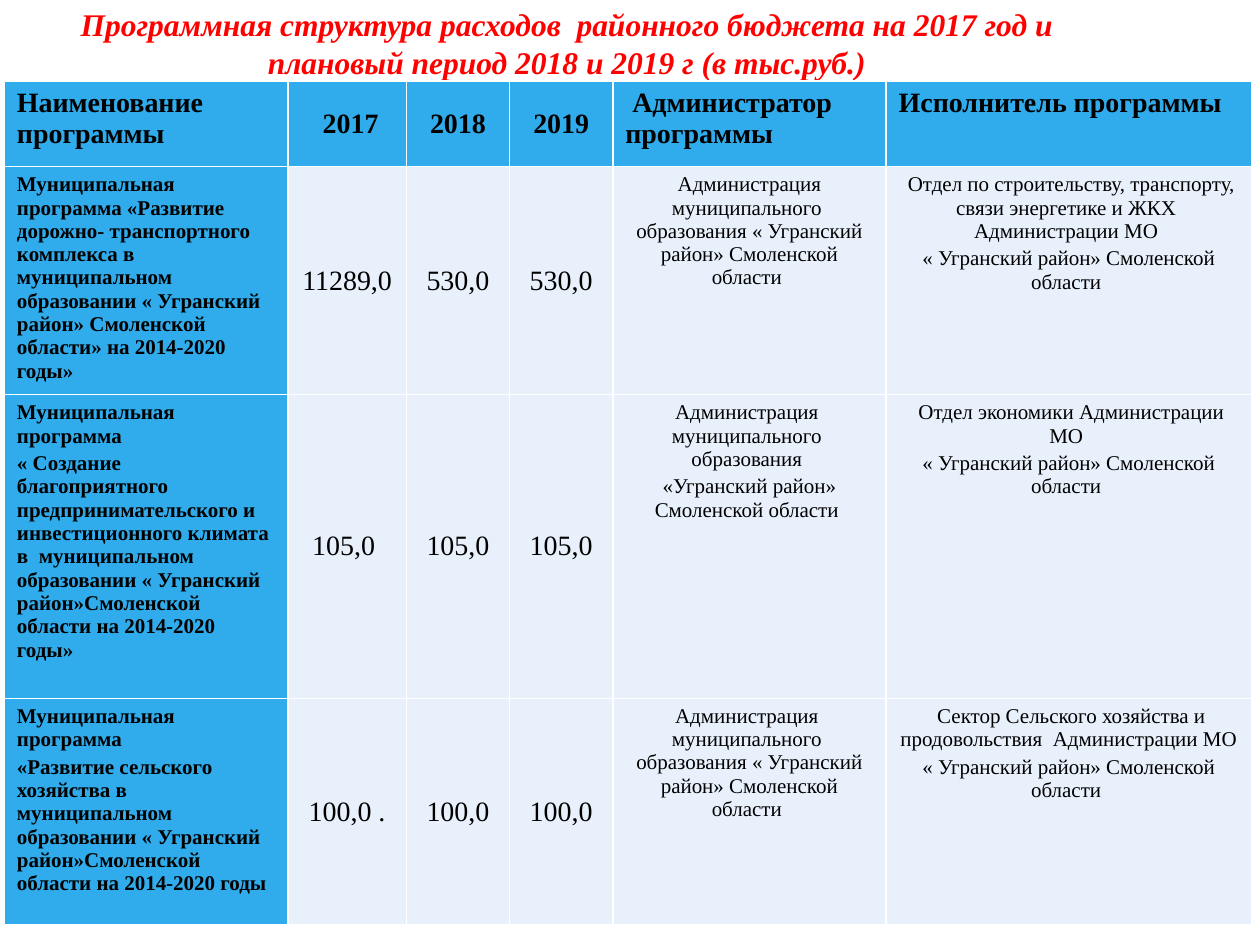
"""Build a slide with the programme structure of a district budget."""
from dataclasses import dataclass

from pptx import Presentation
from pptx.dml.color import RGBColor
from pptx.enum import text as t
from pptx.util import Pt

FACE = "Times New Roman"
BLUE, PALE, BLACK, RED = "30ACEC", "E8F1FB", "000000", "FF0000"
LEFT, MID = t.PP_ALIGN.LEFT, t.PP_ALIGN.CENTER
TOP, CORE = t.MSO_ANCHOR.TOP, t.MSO_ANCHOR.MIDDLE
WIDTHS = (162, 67.7, 59, 59, 156.2, 208.8)
HEIGHTS = (49, 130.3, 173.5, 129.6)
YEARS = range(1, 4)
TITLE = ("Программная структура расходов  районного бюджета на 2017 год и "
         "плановый период 2018 и 2019 г (в тыс.руб.)")
HEADS = ("Наименование программы", " 2017", "2018", "2019",
         " Администратор программы", "Исполнитель программы")
ADMIN = ("Администрация  муниципального  образования « Угранский район» "
         "Смоленской области ")
AREA = "« Угранский район» Смоленской области "


@dataclass(frozen=True)
class Plan:
    """One programme with its yearly sums and the bodies in charge."""
    name: str
    sums: tuple[str, str, str]
    admin: str
    doer: str

    def texts(self) -> tuple[str, ...]:
        """Return the cell texts from left to right."""
        return self.name, *self.sums, self.admin, self.doer


@dataclass(frozen=True)
class Style:
    """Look of the text and ground of a cell."""
    size: int
    bold: bool
    align: t.PP_ALIGN
    anchor: t.MSO_ANCHOR
    fill: str


PLANS = (
    Plan("Муниципальная программа «Развитие дорожно- транспортного комплекса "
         "в муниципальном образовании « Угранский район» Смоленской области» "
         "на 2014-2020 годы»",
         ("11289,0", "530,0", "530,0"), " " + ADMIN,
         " Отдел по строительству, транспорту, связи энергетике и ЖКХ  "
         "Администрации МО \n" + AREA),
    Plan("Муниципальная программа\n« Создание благоприятного "
         "предпринимательского и инвестиционного климата в  муниципальном "
         "образовании « Угранский район»Смоленской области на 2014-2020 годы»",
         ("105,0 ", "105,0", "105,0"),
         "Администрация  муниципального  образования \n"
         "«Угранский район» Смоленской области ",
         " Отдел экономики Администрации МО \n" + AREA),
    Plan("Муниципальная программа\n«Развитие сельского хозяйства в "
         "муниципальном образовании « Угранский район»Смоленской области "
         "на 2014-2020 годы",
         ("100,0 .", "100,0", "100,0"), ADMIN,
         " Сектор Сельского хозяйства и продовольствия  Администрации МО \n"
         + AREA),
)


def paint(fmt, tone: str) -> None:
    """Give a font or a solid fill its colour."""
    if hasattr(fmt, "solid"):
        fmt.solid()
        fmt = fmt.fore_color
    else:
        fmt = fmt.color
    fmt.rgb = RGBColor.from_string(tone)


def write(frame, words: str, size: int, bold: bool, tone: str,
          align: t.PP_ALIGN, slant: bool = False) -> None:
    """Fill a text frame with evenly styled paragraphs."""
    frame.text = words
    for num, para in enumerate(frame.paragraphs):
        para.alignment = align
        para.space_before = Pt(0.2 * size if num else 0)
        font = para.font
        font.name, font.size = FACE, Pt(size)
        font.bold, font.italic = bold, slant
        paint(font, tone)


def pick(row: int, col: int) -> Style:
    """Choose the style of a cell by its place."""
    year = col in YEARS
    if row == 0:
        return Style(16, True, MID if year else LEFT,
                     CORE if year else TOP, BLUE)
    if col == 0:
        return Style(12, True, LEFT, TOP, BLUE)
    return Style(16 if year else 12, False, MID, CORE if year else TOP, PALE)


def draw(slide) -> None:
    """Add the programme table."""
    rows = (HEADS, *(plan.texts() for plan in PLANS))
    grid = slide.shapes.add_table(
        len(rows), len(HEADS), Pt(2.5), Pt(46.3),
        Pt(sum(WIDTHS)), Pt(sum(HEIGHTS))).table
    grid.horz_banding = False
    for col, width in zip(grid.columns, WIDTHS):
        col.width = Pt(width)
    for row, height in zip(grid.rows, HEIGHTS):
        row.height = Pt(height)
    for i, texts in enumerate(rows):
        for j, words in enumerate(texts):
            cell, look = grid.cell(i, j), pick(i, j)
            paint(cell.fill, look.fill)
            cell.vertical_anchor = look.anchor
            write(cell.text_frame, words, look.size, look.bold, BLACK,
                  look.align)


def main() -> None:
    """Build and save the deck."""
    deck = Presentation()
    deck.slide_width, deck.slide_height = Pt(720), Pt(540)
    slide = deck.slides.add_slide(deck.slide_layouts[5])
    head = slide.shapes.title
    head.left, head.top, head.width, head.height = Pt(0), Pt(0), Pt(648), Pt(49)
    frame = head.text_frame
    write(frame, TITLE, 18, True, RED, MID, slant=True)
    frame.auto_size = t.MSO_AUTO_SIZE.NONE
    frame.vertical_anchor = CORE
    draw(slide)
    deck.save("out.pptx")


if __name__ == "__main__":
    main()
